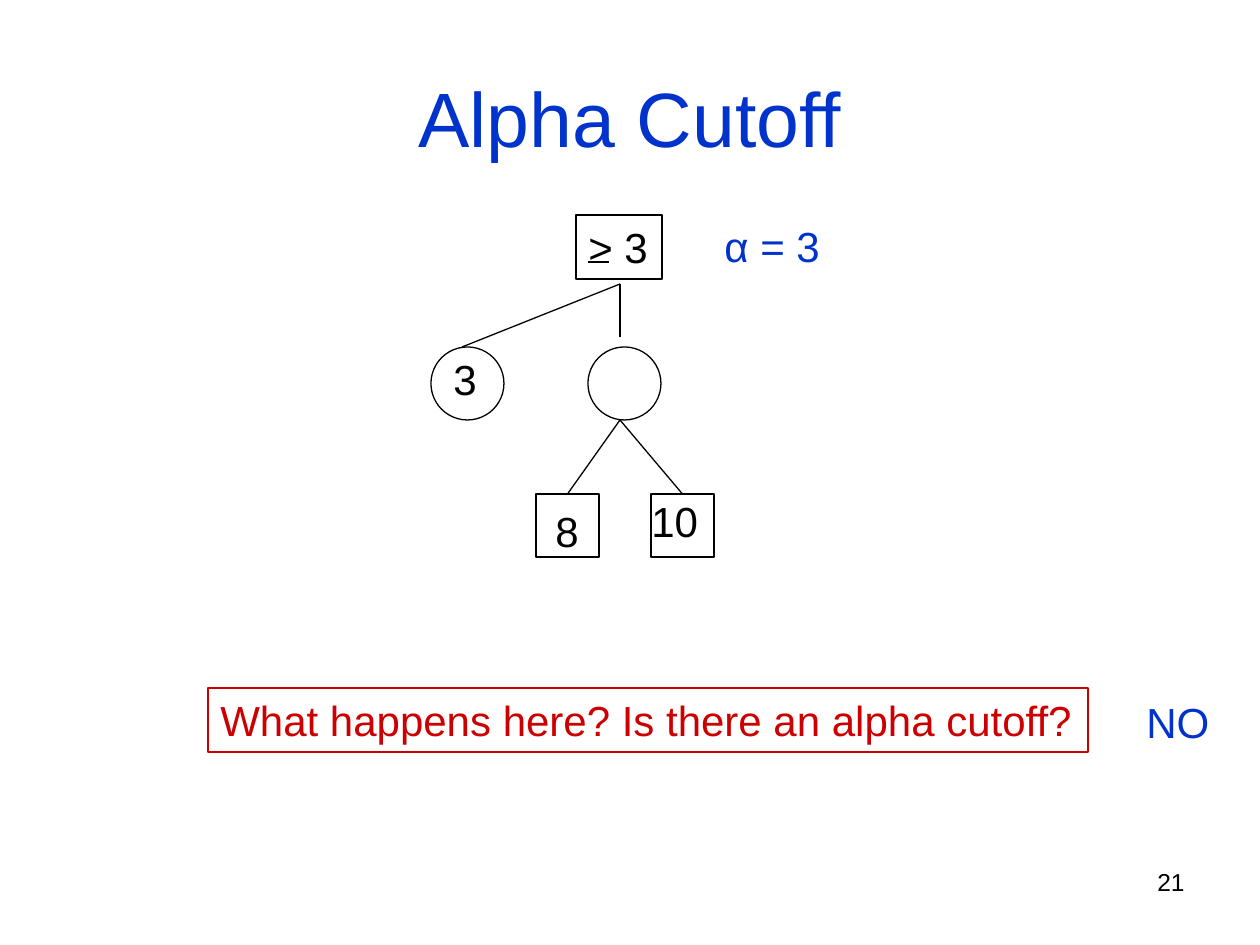
from lxml import etree
from pptx import Presentation
from pptx.dml.color import RGBColor
from pptx.enum.shapes import MSO_CONNECTOR, MSO_SHAPE
from pptx.enum.text import MSO_ANCHOR, PP_ALIGN
from pptx.oxml.ns import qn
from pptx.util import Pt

PX = 914400 / 126
RECT, OVAL = MSO_SHAPE.RECTANGLE, MSO_SHAPE.OVAL
STRAIGHT = MSO_CONNECTOR.STRAIGHT
LEFT, CENTER, RIGHT = PP_ALIGN.LEFT, PP_ALIGN.CENTER, PP_ALIGN.RIGHT
TOP, MIDDLE = MSO_ANCHOR.TOP, MSO_ANCHOR.MIDDLE
COLORS = {"ink": "000000", "blue": "0033CC", "red": "CC0000"}


def emu(*values):
    return [round(v * PX) for v in values]


def color(name):
    return RGBColor.from_string(COLORS[name])


def write(shape, text, hue="ink", size=24, align=LEFT, anchor=TOP, wrap=False):
    frame = shape.text_frame
    frame.text = text
    frame.word_wrap = wrap
    frame.vertical_anchor = anchor
    para = frame.paragraphs[0]
    para.alignment = align
    font = para.runs[0].font
    font.name, font.size = "Arial", Pt(size)
    font.color.rgb = color(hue)


def label(slide, box, text, **style):
    write(slide.shapes.add_textbox(*emu(*box)), text, **style)


def node(slide, kind, box, hue="ink"):
    shape = slide.shapes.add_shape(kind, *emu(*box))
    shape.shadow.inherit = False
    shape.fill.background()
    shape.line.color.rgb = color(hue)
    shape.line.width = Pt(0.75)
    return shape


def edge(slide, start, end):
    line = slide.shapes.add_connector(STRAIGHT, *emu(*start, *end))
    line.line.color.rgb = color("ink")
    line.line.width = Pt(0.75)
    etree.SubElement(line._element.spPr, qn("a:effectLst"))
    return line


def draw_tree(slide, left, top):
    def at(x, y, *size):
        return (left + x, top + y, *size)

    root = node(slide, RECT, at(145, 1, 86, 64))
    write(root, "> 3")
    edge(slide, at(157, 48), at(178, 48))  # turns > into ≥
    label(slide, at(281, 0, 123, 63), "α = 3", hue="blue")

    for x in (0, 157):
        node(slide, OVAL, at(x, 133, 73, 73))
    for end in ((31, 133), (189, 123)):
        edge(slide, at(189, 70), at(*end))
    label(slide, at(10, 133, 49, 63), "3")

    side = 63
    for x, text, box in ((105, "8", (112, 285, 49, 63)),
                         (220, "10", (208, 275, 72, 63))):
        leaf = node(slide, RECT, at(x, 280, side, side))
        line = edge(slide, at(189, 206), at(x + side / 2, 280))
        line.end_connect(leaf, 0)
        label(slide, at(*box), text)


def draw_question(slide, left, top):
    box = node(slide, RECT, (left, top, 880, 64), "red")
    write(box, "What happens here? Is there an alpha cutoff?", "red")
    label(slide, (left + 926, top + 2, 95, 63), "NO", hue="blue", wrap=True)


def main():
    deck = Presentation()
    deck.slide_width, deck.slide_height = emu(1260, 945)
    slide = deck.slides.add_slide(deck.slide_layouts[6])
    label(slide, (63, 38, 1134, 157), "Alpha Cutoff", hue="blue", size=44,
          align=CENTER, anchor=MIDDLE, wrap=True)
    draw_tree(slide, 431, 214)
    draw_question(slide, 208, 688)
    label(slide, (903, 861, 294, 66), "21", size=14, align=RIGHT, wrap=True)
    deck.save("out.pptx")


if __name__ == "__main__":
    main()
